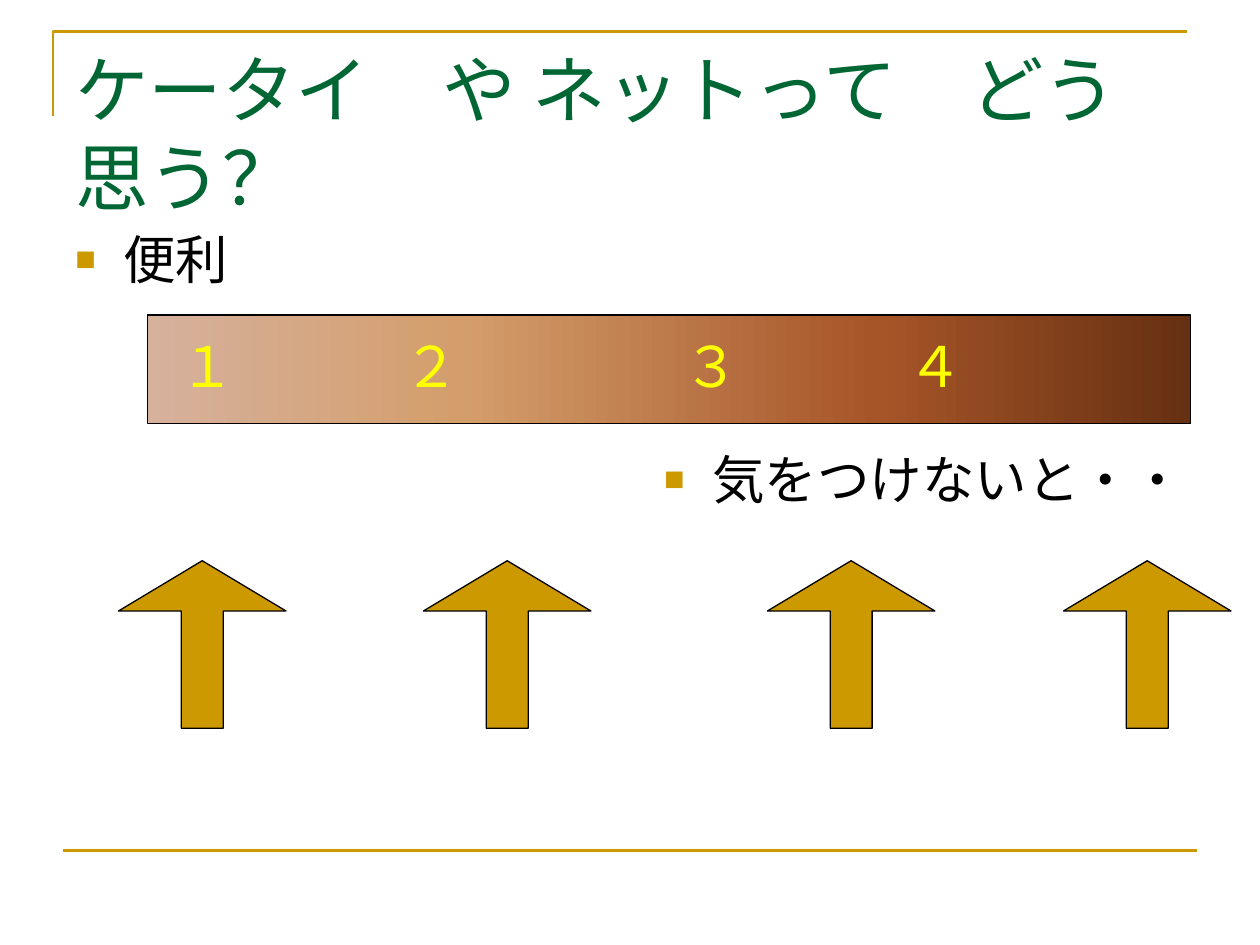
from copy import deepcopy

from lxml import etree
from pptx import Presentation
from pptx.dml.color import RGBColor
from pptx.enum.shapes import MSO_CONNECTOR, MSO_SHAPE
from pptx.enum.text import PP_ALIGN
from pptx.oxml.ns import qn
from pptx.util import Inches, Pt

RECT, DOWN_ARROW = MSO_SHAPE.RECTANGLE, MSO_SHAPE.DOWN_ARROW
STRAIGHT = MSO_CONNECTOR.STRAIGHT
LEFT, RIGHT = PP_ALIGN.LEFT, PP_ALIGN.RIGHT

# Content
TITLE = "ケータイ　や ネットって　どう思う？"
OPINIONS = [("便利", LEFT, 0), ("気をつけないと・・", RIGHT, 90)]  # text, side, space before
RATINGS = [("１", 0), ("２", 4), ("３", 9), ("４", 13)]  # digit, column in full-width characters
SCALE_STOPS = [(0, "D6B19C"), (0.3, "D49E6C"), (0.7, "A65528"), (1, "663012")]
ARROW_LEFTS = [0.94, 3.36, 6.09, 8.44]

COLORS = {"gold": "CC9900", "title": "006633", "text": "000000", "digit": "FFFF00"}
WIDTH, HEIGHT = 10, 7.5
MARGIN = WIDTH * 0.05
CONTENT_WIDTH = WIDTH - 2 * MARGIN
ARROW_SIZE = 1.33
DIGIT_SIZE = 32


def rgb(name):
    return RGBColor.from_string(COLORS.get(name, name))


def add_text(left, top, width, height):
    frame = slide.shapes.add_textbox(*map(Inches, (left, top, width, height))).text_frame
    frame.word_wrap = True
    return frame


def style(paragraph, size, font, color):
    for run in paragraph.runs:
        run.font.size, run.font.name = Pt(size), font
        run.font.color.rgb = rgb(color)


def add_child(parent, tag, **attributes):
    child = etree.SubElement(parent, qn(tag))
    for key, value in attributes.items():
        child.set(key, str(value))
    return child


def outline(shape, color, width):
    shape.line.color.rgb = rgb(color)
    shape.line.width = Pt(width)


def add_block(kind, left, top, width, height):
    block = slide.shapes.add_shape(kind, *map(Inches, (left, top, width, height)))
    block.shadow.inherit = False
    outline(block, "text", 0.75)
    return block


deck = Presentation()
deck.slide_width, deck.slide_height = Inches(WIDTH), Inches(HEIGHT)
slide = deck.slides.add_slide(deck.slide_layouts[6])

# Frame: corner at the top, rule at the bottom
builder = slide.shapes.build_freeform(Inches(0.42), Inches(0.92))
builder.add_line_segments([(Inches(0.42), Inches(0.25)), (Inches(9.42), Inches(0.25))], close=False)
corner = builder.convert_to_shape()
corner.shadow.inherit = False
corner.fill.background()
outline(corner, "gold", 1.5)

rule_y = Inches(HEIGHT * 0.9)
rule = slide.shapes.add_connector(STRAIGHT, Inches(MARGIN), rule_y, Inches(WIDTH - MARGIN), rule_y)
outline(rule, "gold", 1.5)
add_child(rule._element.spPr, "a:effectLst")

# Title
title = add_text(MARGIN, 0.3, CONTENT_WIDTH, 1.25).paragraphs[0]
title.text = TITLE
style(title, 42, "Times New Roman", "title")

# Opinions at the two ends of the scale
opinions = add_text(MARGIN, 1.75, CONTENT_WIDTH, 4.95)
for index, (words, side, gap) in enumerate(OPINIONS):
    opinion = opinions.add_paragraph() if index else opinions.paragraphs[0]
    opinion.text = words
    opinion.alignment = side
    opinion.space_before = Pt(gap)
    properties = opinion._p.get_or_add_pPr()
    properties.set("marL", str(Inches(0.38)))
    properties.set("indent", str(-Inches(0.38)))
    add_child(add_child(properties, "a:buClr"), "a:srgbClr", val=COLORS["gold"])
    add_child(properties, "a:buSzPct", val=65000)
    add_child(properties, "a:buFont", typeface="Arial")
    add_child(properties, "a:buChar", char="■")
    style(opinion, 30, "Arial", "text")

# Scale bar
scale = add_block(RECT, 1.17, 2.5, 8.28, 0.86)
scale.fill.gradient()
scale.fill.gradient_angle = 0
stop_list = scale._element.spPr.find(qn("a:gradFill")).find(qn("a:gsLst"))
while len(stop_list) < len(SCALE_STOPS):
    stop_list.append(deepcopy(stop_list[0]))
for stop, (position, color) in zip(scale.fill.gradient_stops, SCALE_STOPS):
    stop.position = position
    stop.color.rgb = rgb(color)

# Ratings on the bar, one tab stop per column
ratings = add_text(1.33, 2.58, 7.97, 0.64).paragraphs[0]
ratings.text = "\t".join(digit for digit, _ in RATINGS)
tabs = add_child(ratings._p.get_or_add_pPr(), "a:tabLst")
for _, column in RATINGS[1:]:
    add_child(tabs, "a:tab", pos=Pt(column * DIGIT_SIZE), algn="l")
style(ratings, DIGIT_SIZE, "Arial", "digit")

# Arrows pointing up at the scale
for left in ARROW_LEFTS:
    arrow = add_block(DOWN_ARROW, left, 4.45, ARROW_SIZE, ARROW_SIZE)
    arrow.rotation = 180
    arrow.adjustments[0], arrow.adjustments[1] = 0.25, 0.3
    arrow.fill.solid()
    arrow.fill.fore_color.rgb = rgb("gold")

deck.save("out.pptx")
